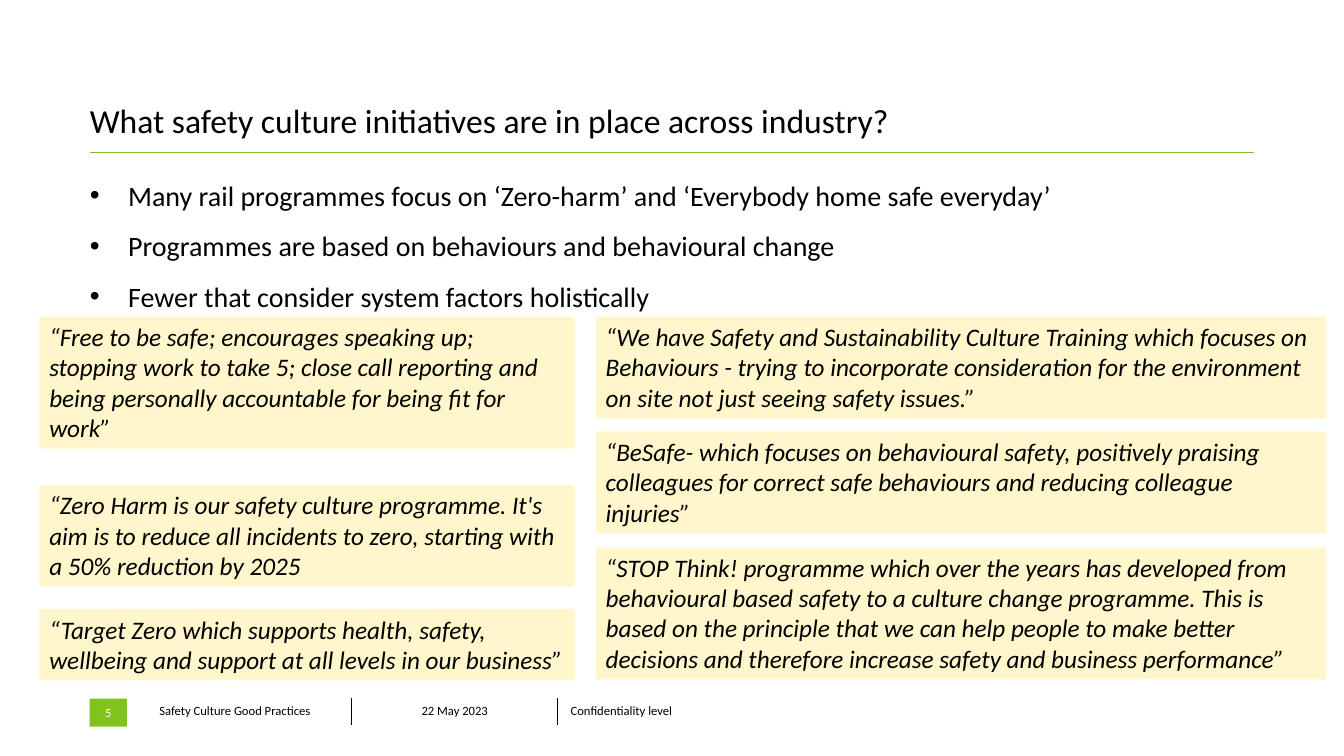
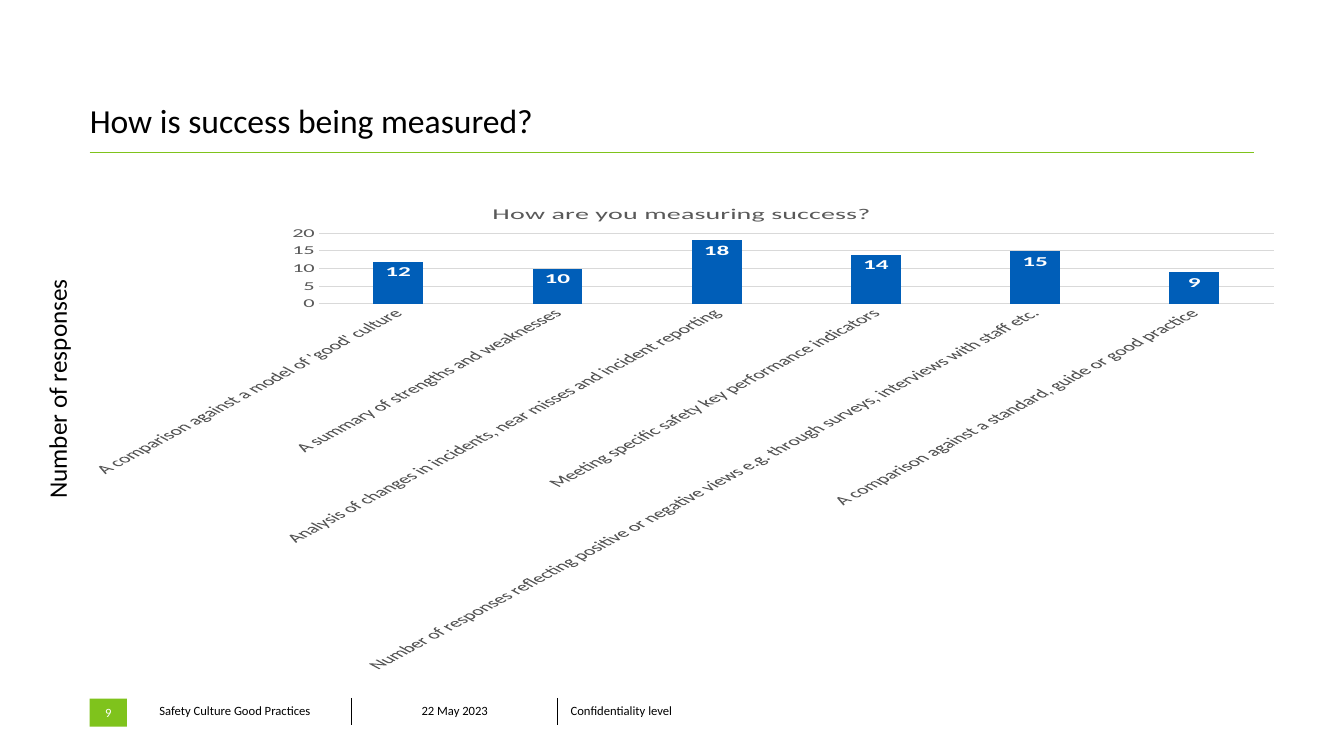
from pptx import Presentation
from pptx.chart.data import CategoryChartData
from pptx.dml.color import RGBColor
from pptx.enum.chart import XL_CHART_TYPE as ChartType, XL_LABEL_POSITION as LabelPosition
from pptx.enum.chart import XL_TICK_MARK as TickMark
from pptx.enum.shapes import MSO_CONNECTOR as Connector, MSO_SHAPE as Shape
from pptx.enum.text import MSO_ANCHOR as Anchor, PP_ALIGN as Align
from pptx.oxml.ns import qn
from pptx.util import Inches, Pt
from lxml import etree

FONT = "Calibri"
COLORS = {
    "text": "000000",
    "accent": "7FC31C",
    "quote": "FFF6CC",
    "white": "FFFFFF",
    "bar": "005EB8",
    "chart_text": "595959",
    "grid": "D9D9D9",
}
LEFT = 0.89
CONTENT_WIDTH = 11.55
FOOTER_TOP = 6.93
FOOTER_COLUMN = 2.04

FOOTER = [
    ("Safety Culture Good Practices", Align.LEFT, ["lnR"]),
    ("22 May 2023", Align.CENTER, ["lnL", "lnR"]),
    ("Confidentiality level", Align.LEFT, ["lnL"]),
]
BULLETS = [
    "Many rail programmes focus on ‘Zero-harm’ and ‘Everybody home safe everyday’",
    "Programmes are based on behaviours and behavioural change",
    "Fewer that consider system factors holistically",
]
QUOTE_COLUMNS = [
    (0.39, 5.31, [
        (3.14, 1.31, "“Free to be safe; encourages speaking up; stopping work to take 5; "
                     "close call reporting and being personally accountable for being fit for work”"),
        (4.81, 1.01, "“Zero Harm is our safety culture programme. It's aim is to reduce all "
                     "incidents to zero, starting with a 50% reduction by 2025"),
        (6.04, 0.71, "“Target Zero which supports health, safety, wellbeing and support at all "
                     "levels in our business”"),
    ]),
    (5.91, 7.24, [
        (3.14, 1.01, "“We have Safety and Sustainability Culture Training which focuses on "
                     "Behaviours - trying to incorporate consideration for the environment on site "
                     "not just seeing safety issues.”"),
        (4.28, 1.01, "“BeSafe- which focuses on behavioural safety, positively praising colleagues "
                     "for correct safe behaviours and reducing colleague injuries”"),
        (5.43, 1.31, "“STOP Think! programme which over the years has developed from behavioural "
                     "based safety to a culture change programme. This is based on the principle "
                     "that we can help people to make better decisions and therefore increase "
                     "safety and business performance”"),
    ]),
]
MEASURES = {
    "A comparison against a model of 'good' culture": 12,
    "A summary of strengths and weaknesses": 10,
    "Analysis of changes in incidents, near misses and incident reporting": 18,
    "Meeting specific safety key performance indicators": 14,
    "Number of responses reflecting positive or negative views e.g. through surveys, "
    "interviews with staff etc.": 15,
    "A comparison against a standard, guide or good practice": 9,
}


def color(name):
    return RGBColor.from_string(COLORS[name])


def set_all(target, values):
    for name, value in values.items():
        setattr(target, name, value)


def style_font(font, size, color_name="text", **extra):
    set_all(font, {"name": FONT, "size": Pt(size), "bold": False, **extra})
    font.color.rgb = color(color_name)


def set_margins(target, across, down):
    set_all(target, {
        "margin_left": Inches(across), "margin_right": Inches(across),
        "margin_top": Inches(down), "margin_bottom": Inches(down),
    })


def place(left, top, width, height):
    return [Inches(value) for value in (left, top, width, height)]


def write(para, text, size, color_name="text", align=Align.LEFT, **extra):
    para.alignment = align
    para.add_run().text = text
    style_font(para.runs[0].font, size, color_name, **extra)


def add_panel(page, area, fill_name):
    panel = page.shapes.add_shape(Shape.RECTANGLE, *place(*area))
    panel.shadow.inherit = False
    panel.fill.solid()
    panel.fill.fore_color.rgb = color(fill_name)
    panel.line.fill.background()
    return panel.text_frame


def add_text_box(page, area):
    box = page.shapes.add_textbox(*place(*area))
    box.text_frame.word_wrap = True
    return box


def add_title(page, text):
    title = page.shapes.title
    names = ("left", "top", "width", "height")
    set_all(title, dict(zip(names, place(LEFT, 0.5, 9.16, 0.89))))
    frame = title.text_frame
    set_margins(frame, 0, 0)
    set_all(frame, {"vertical_anchor": Anchor.BOTTOM, "word_wrap": True})
    write(frame.paragraphs[0], text, 24)


def add_rule(page):
    rule = page.shapes.add_connector(
        Connector.STRAIGHT, Inches(LEFT), Inches(1.51), Inches(LEFT + CONTENT_WIDTH), Inches(1.51))
    rule.line.color.rgb = color("accent")
    rule.line.width = Pt(0.6)
    etree.SubElement(rule._element.spPr, qn("a:effectLst"))


def add_borders(cell, sides):
    properties = cell._tc.get_or_add_tcPr()
    for index, side in enumerate(sides):
        border = etree.Element(qn(f"a:{side}"), w=str(Pt(1)))
        fill = etree.SubElement(border, qn("a:solidFill"))
        etree.SubElement(fill, qn("a:srgbClr"), val=COLORS["text"])
        properties.insert(index, border)


def add_footer(page, number):
    width = FOOTER_COLUMN * len(FOOTER)
    area = place(1.45, FOOTER_TOP, width, 0.25)
    table = page.shapes.add_table(1, len(FOOTER), *area).table
    set_all(table, {"first_row": False, "horz_banding": False})
    for cell, (text, align, sides) in zip(table.iter_cells(), FOOTER):
        set_margins(cell, 0.13, 0.05)
        cell.vertical_anchor = Anchor.MIDDLE
        cell.fill.background()
        write(cell.text_frame.paragraphs[0], text, 9, align=align)
        add_borders(cell, sides)
    frame = add_panel(page, (LEFT, FOOTER_TOP, 0.37, 0.28), "accent")
    set_margins(frame, 0.04, 0.04)
    frame.vertical_anchor = Anchor.MIDDLE
    write(frame.paragraphs[0], str(number), 9, "white", Align.CENTER)


def add_page(deck, title, number):
    page = deck.slides.add_slide(deck.slide_layouts[5])
    add_title(page, title)
    add_rule(page)
    add_footer(page, number)
    return page


def add_bullets(page, lines):
    frame = add_text_box(page, (LEFT, 1.77, CONTENT_WIDTH, 1.37)).text_frame
    set_margins(frame, 0, 0)
    for index, line in enumerate(lines):
        para = frame.add_paragraph() if index else frame.paragraphs[0]
        properties = para._p.get_or_add_pPr()
        properties.set("marL", str(Inches(0.38)))
        properties.set("indent", str(-Inches(0.38)))
        etree.SubElement(properties, qn("a:buFont"), typeface="Arial")
        etree.SubElement(properties, qn("a:buChar"), char="•")
        para.space_after = Pt(12)
        write(para, line, 20)


def add_quote(page, area, text):
    frame = add_panel(page, area, "quote")
    set_all(frame, {"word_wrap": True, "vertical_anchor": Anchor.TOP})
    write(frame.paragraphs[0], text, 18, italic=True)


def style_axes(chart):
    for axis in (chart.category_axis, chart.value_axis):
        set_all(axis, {"major_tick_mark": TickMark.NONE, "minor_tick_mark": TickMark.NONE})
        style_font(axis.tick_labels.font, 16, "chart_text")
    values = chart.value_axis
    set_all(values, {"minimum_scale": 0, "maximum_scale": 20, "major_unit": 5})
    values.format.line.fill.background()
    for line in (chart.category_axis.format.line, values.major_gridlines.format.line):
        line.color.rgb = color("grid")
        line.width = Pt(0.75)
    body = chart.category_axis._element.find(qn("c:txPr")).find(qn("a:bodyPr"))
    body.set("rot", str(-45 * 60000))
    body.set("vert", "horz")


def add_measure_chart(page):
    data = CategoryChartData(number_format="General")
    data.categories = list(MEASURES)
    data.add_series("Series 1", list(MEASURES.values()))
    area = place(0.65, 1.91, 12.23, 4.76)
    chart = page.shapes.add_chart(ChartType.COLUMN_CLUSTERED, *area, data).chart
    style_font(chart.font, 10)
    chart.has_legend = False
    chart.has_title = True
    title = chart.chart_title
    title.include_in_layout = False
    write(title.text_frame.paragraphs[0], "How are you measuring success?", 20,
          "chart_text", Align.CENTER)
    style_axes(chart)
    plot = chart.plots[0]
    set_all(plot, {"gap_width": 219, "overlap": -27, "vary_by_categories": False})
    series = plot.series[0]
    series.format.fill.solid()
    series.format.fill.fore_color.rgb = color("bar")
    labels = series.data_labels
    set_all(labels, {"show_value": True, "position": LabelPosition.INSIDE_END})
    style_font(labels.font, 18, "white", bold=True)


def build_initiatives(deck):
    page = add_page(deck, "What safety culture initiatives are in place across industry?", 5)
    add_bullets(page, BULLETS)
    for left, width, quotes in QUOTE_COLUMNS:
        for top, height, text in quotes:
            add_quote(page, (left, top, width, height), text)


def build_measures(deck):
    page = add_page(deck, "How is success being measured?", 9)
    add_measure_chart(page)
    axis_label = add_text_box(page, (-0.73, 3.55, 2.59, 0.4))
    axis_label.rotation = 270
    write(axis_label.text_frame.paragraphs[0], "Number of responses", 18)


def main():
    deck = Presentation()
    set_all(deck, {"slide_width": Inches(13.33), "slide_height": Inches(7.5)})
    build_initiatives(deck)
    build_measures(deck)
    deck.save("out.pptx")


if __name__ == "__main__":
    main()
